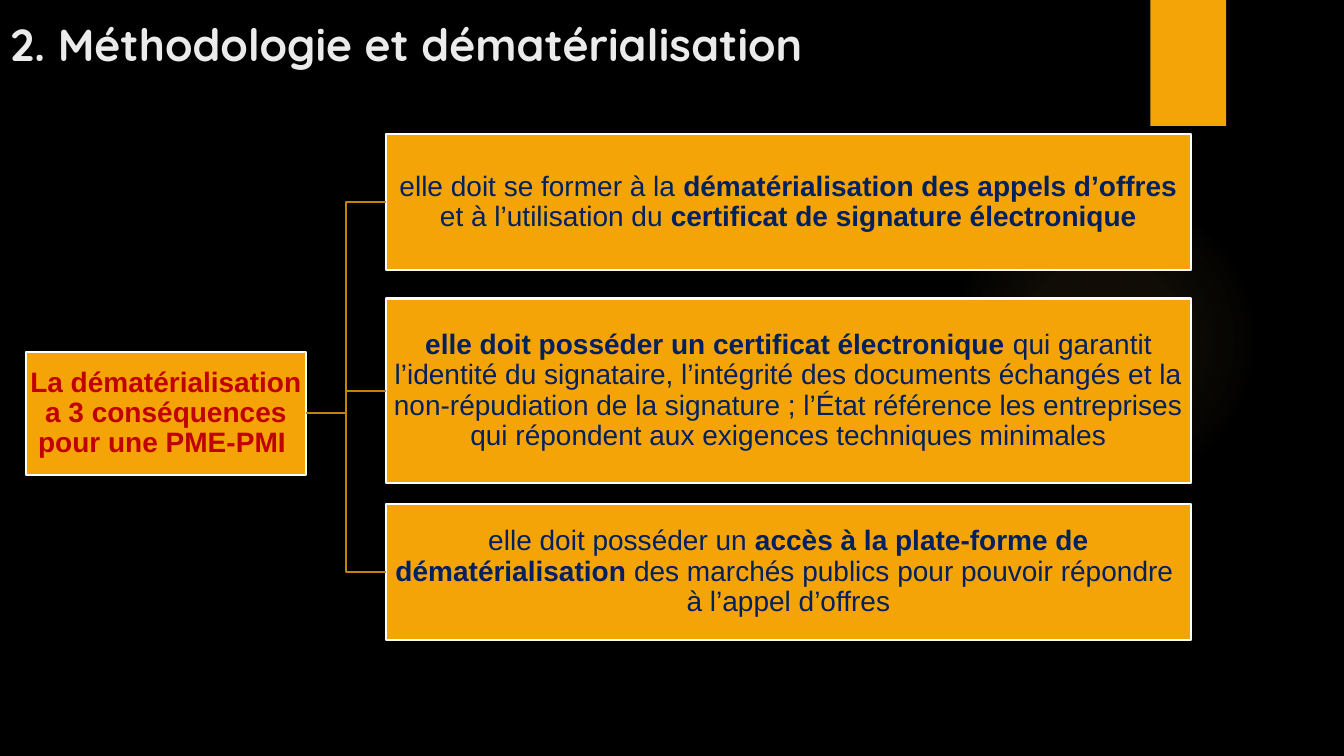
"""Build the slide on the three consequences of going paperless for a small business."""
import pptx
import pptx.util
import pptx.dml.color
import pptx.enum.shapes
import pptx.enum.text
import pptx.oxml
import pptx.oxml.ns

Pt = pptx.util.Pt
SHAPES = pptx.enum.shapes.MSO_SHAPE
ORANGE, WHITE, NAVY, RED = "F5A408", "FFFFFF", "002060", "C00000"


def color(value):
    return pptx.dml.color.RGBColor.from_string(value)


def add_box(left, top, width, height, paragraphs, text_color):
    box = slide.shapes.add_shape(SHAPES.RECTANGLE, Pt(left), Pt(top), Pt(width), Pt(height))
    box.shadow.inherit = False
    box.fill.solid()
    box.fill.fore_color.rgb = color(ORANGE)
    box.line.color.rgb = color(WHITE)
    box.line.width = Pt(1.5)
    frame = box.text_frame
    frame.word_wrap = True
    frame.vertical_anchor = pptx.enum.text.MSO_ANCHOR.MIDDLE
    frame.margin_left = frame.margin_right = frame.margin_top = frame.margin_bottom = Pt(1)
    for index, runs in enumerate(paragraphs):
        paragraph = frame.add_paragraph() if index else frame.paragraphs[0]
        paragraph.alignment = pptx.enum.text.PP_ALIGN.CENTER
        paragraph.line_spacing = 0.9
        for text, bold in runs:
            run = paragraph.add_run()
            run.text = text
            run.font.name = "Arial"
            run.font.size = Pt(20)
            run.font.bold = bold
            run.font.color.rgb = color(text_color)
    return box


presentation = pptx.Presentation()
presentation.slide_width, presentation.slide_height = Pt(960), Pt(540)
slide = presentation.slides.add_slide(presentation.slide_layouts[5])
slide.background.fill.solid()
slide.background.fill.fore_color.rgb = color("000000")

title = slide.shapes.title
title.left, title.top, title.width, title.height = Pt(0), Pt(0), Pt(861), Pt(54)
title.text_frame.word_wrap = True
title.text_frame.vertical_anchor = pptx.enum.text.MSO_ANCHOR.BOTTOM
title_paragraph = title.text_frame.paragraphs[0]
title_paragraph.alignment = pptx.enum.text.PP_ALIGN.LEFT
title_run = title_paragraph.add_run()
title_run.text = "2. Méthodologie et dématérialisation"
title_run.font.name = "Quicksand"
title_run.font.size = Pt(32)
title_run.font.bold = True
title_run.font.color.rgb = color("EBEBEB")

glow = slide.shapes.add_shape(SHAPES.OVAL, Pt(677.5), Pt(131.8), Pt(221.8), Pt(221.8))
glow.shadow.inherit = False
glow.line.fill.background()
stops = "".join(
    f'<a:gs pos="{position}000"><a:srgbClr val="FAC96A"><a:alpha val="{alpha}000"/></a:srgbClr></a:gs>'
    for position, alpha in [(0, 7), (36, 6), (69, 0), (100, 0)]
)
gradient = pptx.oxml.parse_xml(
    f'<a:gradFill {pptx.oxml.ns.nsdecls("a")}><a:gsLst>{stops}</a:gsLst><a:path path="circle">'
    '<a:fillToRect l="50000" t="50000" r="50000" b="50000"/></a:path></a:gradFill>'
)
glow.element.spPr.find(pptx.oxml.ns.qn("a:prstGeom")).addnext(gradient)

tab = slide.shapes.add_shape(SHAPES.RECTANGLE, Pt(821.8), Pt(0), Pt(54), Pt(90))
tab.shadow.inherit = False
tab.fill.solid()
tab.fill.fore_color.rgb = color(ORANGE)
tab.line.fill.background()

cause = add_box(18.7, 251.2, 199.6, 87.8,
                [[("La dématérialisation a 3 conséquences pour une PME-PMI ", True)]], RED)

consequences = [
    (95.8, 97.2, [[
        ("elle doit se former à la ", False),
        ("dématérialisation des appels d’offres ", True),
        ("et à l’utilisation du ", False),
        ("certificat de signature électronique", True),
    ]]),
    (213.2, 132, [[
        ("elle doit posséder un certificat électronique ", True),
        ("qui garantit l’identité du signataire, l’intégrité des documents échangés et la "
         "non-répudiation de la signature ; l’État référence les entreprises qui répondent "
         "aux exigences techniques minimales", False),
    ]]),
    (360, 97.2, [
        [("elle doit posséder un ", False),
         ("accès à la plate-forme de dématérialisation ", True),
         ("des marchés publics pour pouvoir répondre ", False)],
        [("à l’appel d’offres", False)],
    ]),
]
LEFT_SITE, RIGHT_SITE = 1, 3
for top, height, paragraphs in consequences:
    consequence = add_box(275.8, top, 574.8, height, paragraphs, NAVY)
    branch = slide.shapes.add_connector(pptx.enum.shapes.MSO_CONNECTOR.ELBOW, 0, 0, 0, 0)
    branch.begin_connect(cause, RIGHT_SITE)
    branch.end_connect(consequence, LEFT_SITE)
    branch.line.color.rgb = color("C48306")
    branch.line.width = Pt(1.5)
    branch.element.spPr.append(pptx.oxml.parse_xml(f'<a:effectLst {pptx.oxml.ns.nsdecls("a")}/>'))

presentation.save("out.pptx")
